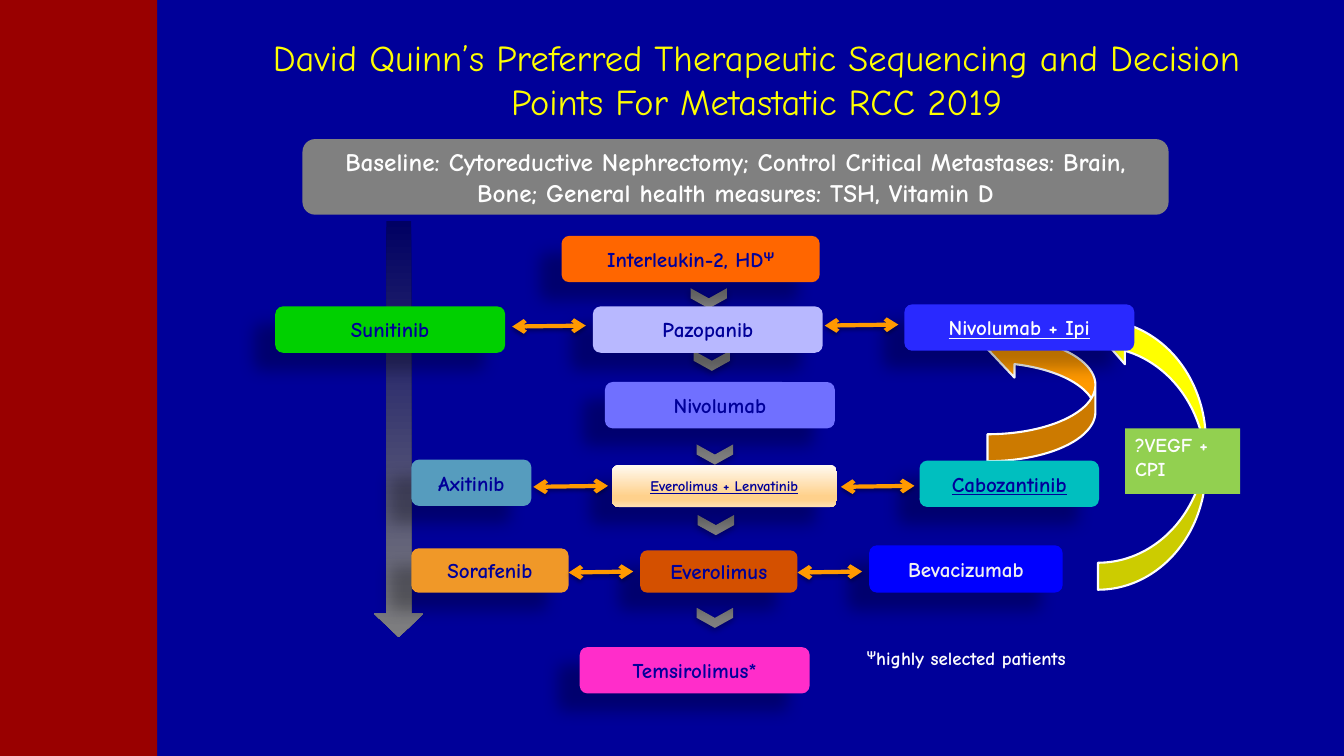
from lxml import etree
from pptx import Presentation
from pptx.dml.color import RGBColor
from pptx.enum.shapes import MSO_CONNECTOR, MSO_SHAPE
from pptx.enum.text import MSO_ANCHOR, PP_ALIGN
from pptx.oxml import parse_xml
from pptx.oxml.ns import nsdecls, qn
from pptx.util import Inches, Pt

FONT = "Comic Neue"
NAVY, WHITE, GREY, ORANGE = "000099", "FDFDFD", "7F7F7F", "FF9900"
CREAM = [(0, "FFFAF2"), (74, "FFD18C"), (83, "FFD18C"), (100, "FFE0B2")]
FADE = [(0, "000063"), (100, GREY)]
# opacity %, blur pt, distance pt, direction degrees
BOX_SHADOW = (28, 11.8, 19.7, 141)
CHEVRON_SHADOW = (35, 5, 1.8, 90)
LINK_SHADOW = (38, 3.1, 1.6, 90)

# name, box, fill, text colour, size, underlined
DRUGS = [
    ("Interleukin-2, HD", (5.57, 2.34, 2.56, 0.46), "FF6600", NAVY, 15, False),
    ("Sunitinib", (2.73, 3.04, 2.28, 0.46), "00D000", NAVY, 15, False),
    ("Pazopanib", (5.88, 3.04, 2.28, 0.46), "B8B8FF", NAVY, 15, False),
    ("Nivolumab + Ipi", (8.97, 3.02, 2.28, 0.46), "2929FF", WHITE, 15, True),
    ("Nivolumab", (6, 3.79, 2.28, 0.46), "7070FF", NAVY, 15, False),
    ("Axitinib", (4.08, 4.56, 1.19, 0.46), "569CBE", NAVY, 15, False),
    ("Everolimus + Lenvatinib", (6.07, 4.61, 2.23, 0.42), CREAM, NAVY, 10.5, True),
    ("Cabozantinib", (9.12, 4.57, 1.78, 0.46), "00BFBF", NAVY, 15, True),
    ("Sorafenib", (4.08, 5.44, 1.56, 0.44), "F09828", NAVY, 15, False),
    ("Everolimus", (6.35, 5.46, 1.56, 0.42), "D45000", NAVY, 15, False),
    ("Bevacizumab", (8.62, 5.41, 1.92, 0.47), "0000FF", "F0F0F0", 15, False),
    ("Temsirolimus*", (5.75, 6.42, 2.28, 0.46), "FF2DCA", NAVY, 15, False),
]
CHEVRONS = [(6.93, 2.78), (6.96, 3.4), (6.99, 4.33), (7, 5.03), (6.99, 5.95)]
# left, top, width of each double-headed arrow
LINKS = [(5.08, 3.24, 0.73), (8.18, 3.23, 0.73), (5.29, 4.83, 0.74),
         (8.34, 4.83, 0.73), (5.64, 5.68, 0.64), (7.91, 5.68, 0.64)]


def rgb(color):
    return RGBColor.from_string(color)


def set_fill(sp, fill):
    """Fill with a hex colour, or with vertical gradient stops."""
    if isinstance(fill, str):
        sp.fill.solid()
        sp.fill.fore_color.rgb = rgb(fill)
        return
    stops = "".join(f'<a:gs pos="{pos * 1000}"><a:srgbClr val="{color}"/></a:gs>'
                    for pos, color in fill)
    grad = parse_xml(f'<a:gradFill {nsdecls("a")} rotWithShape="1"><a:gsLst>{stops}</a:gsLst>'
                     '<a:lin ang="5400000" scaled="0"/></a:gradFill>')
    sp._element.spPr.find(qn("a:prstGeom")).addnext(grad)


def set_shadow(sp, shadow):
    alpha, blur, dist, angle = shadow
    spPr = sp._element.spPr
    for old in spPr.findall(qn("a:effectLst")):
        spPr.remove(old)
    spPr.append(parse_xml(
        f'<a:effectLst {nsdecls("a")}><a:outerShdw blurRad="{Pt(blur)}" dist="{Pt(dist)}" '
        f'dir="{angle * 60000}" algn="ctr" rotWithShape="0"><a:srgbClr val="000000">'
        f'<a:alpha val="{alpha * 1000}"/></a:srgbClr></a:outerShdw></a:effectLst>'))


def add_shape(slide, kind, box, fill, outline=None, rotation=0):
    sp = slide.shapes.add_shape(kind, *map(Inches, box))
    sp.shadow.inherit = False
    sp.rotation = rotation
    set_fill(sp, fill)
    if outline:
        sp.line.color.rgb = rgb(outline)
        sp.line.width = Pt(1.5)
    else:
        sp.line.fill.background()
    return sp


def write(sp, text, size, color, bold=True, align=PP_ALIGN.CENTER, anchor=MSO_ANCHOR.MIDDLE):
    tf = sp.text_frame
    tf.word_wrap = True
    tf.vertical_anchor = anchor
    p = tf.paragraphs[0]
    p.alignment = align
    p.font.name, p.font.size, p.font.bold = FONT, Pt(size), bold
    p.font.color.rgb = rgb(color)
    p.add_run().text = text
    return p


def raise_run(r):
    r.font._element.set("baseline", "30000")


def add_header(slide, left, top):
    title = slide.shapes.add_textbox(*map(Inches, (left, top, 10.36, 0.98)))
    write(title, "David Quinn’s Preferred Therapeutic Sequencing and Decision "
          "Points For Metastatic RCC 2019", 26, "FFFF00", bold=False)
    baseline = add_shape(slide, MSO_SHAPE.ROUNDED_RECTANGLE,
                         (left + 0.67, top + 1.09, 8.59, 0.75), "808080")
    write(baseline, "Baseline: Cytoreductive Nephrectomy; Control Critical Metastases: Brain, "
          "Bone; General health measures: TSH, Vitamin D", 18, WHITE)


def add_chevron(slide, left, top):
    sp = add_shape(slide, MSO_SHAPE.CHEVRON, (left, top, 0.2, 0.36), GREY, rotation=90)
    set_shadow(sp, CHEVRON_SHADOW)


def add_drug(slide, name, box, fill, color, size, underlined):
    sp = add_shape(slide, MSO_SHAPE.ROUNDED_RECTANGLE, box, fill)
    set_shadow(sp, BOX_SHADOW)
    p = write(sp, name, size, color)
    p.font.underline = underlined
    p.runs[0].font.underline = underlined
    return p


def add_link(slide, left, top, width):
    """Double-headed arrow between two alternatives."""
    line = slide.shapes.add_connector(
        MSO_CONNECTOR.STRAIGHT, *map(Inches, (left, top, left + width, top - 0.01)))
    line.line.color.rgb = rgb(ORANGE)
    line.line.width = Pt(3)
    ln = line.line._get_or_add_ln()
    for end in ("a:headEnd", "a:tailEnd"):
        etree.SubElement(ln, qn(end), type="arrow")
    set_shadow(line, LINK_SHADOW)


def add_return_arrows(slide, left, top):
    """Curved arrows leading back up, with the label on the outer one."""
    for dx, dy, length, color in [(0, 0, 1.38, ORANGE), (0.38, 0.56, 2.81, "FFFF00")]:
        add_shape(slide, MSO_SHAPE.CURVED_UP_ARROW, (left + dx, top + dy, length, 1.07),
                  color, WHITE, 270)
    label = add_shape(slide, MSO_SHAPE.RECTANGLE, (left + 1.52, top + 0.9, 1.14, 0.65), "92D050")
    write(label, "?VEGF + CPI", 14, WHITE, align=PP_ALIGN.LEFT, anchor=MSO_ANCHOR.TOP)


def add_footnote(slide, left, top):
    note = slide.shapes.add_textbox(*map(Inches, (left, top, 2.77, 0.33)))
    p = write(note, "Ψ", 13.5, WHITE, anchor=MSO_ANCHOR.TOP)
    mark = p.runs[0]
    mark.font.name, mark.font.size = "Arial", Pt(14)
    raise_run(mark)
    p.add_run().text = "highly selected patients"


def add_pathway(slide):
    for left, top in CHEVRONS:
        add_chevron(slide, left, top)
    arrow = add_shape(slide, MSO_SHAPE.DOWN_ARROW, (3.71, 2.19, 0.49, 4.13), FADE)
    arrow.adjustments[1] = 0.474
    add_return_arrows(slide, 9.64, 3.35)
    for drug in DRUGS:
        p = add_drug(slide, *drug)
        if drug[0] == "Interleukin-2, HD":
            r = p.add_run()
            r.text = "Ψ"
            raise_run(r)
    for link in LINKS:
        add_link(slide, *link)
    add_footnote(slide, 8.2, 6.36)


def main():
    prs = Presentation()
    prs.slide_width, prs.slide_height = Inches(13.33), Inches(7.5)
    slide = prs.slides.add_slide(prs.slide_layouts[6])
    slide.background.fill.solid()
    slide.background.fill.fore_color.rgb = rgb(NAVY)
    add_shape(slide, MSO_SHAPE.RECTANGLE, (0, 0, 1.56, 7.5), "990000")
    add_header(slide, 2.33, 0.29)
    add_pathway(slide)
    prs.save("out.pptx")


if __name__ == "__main__":
    main()
